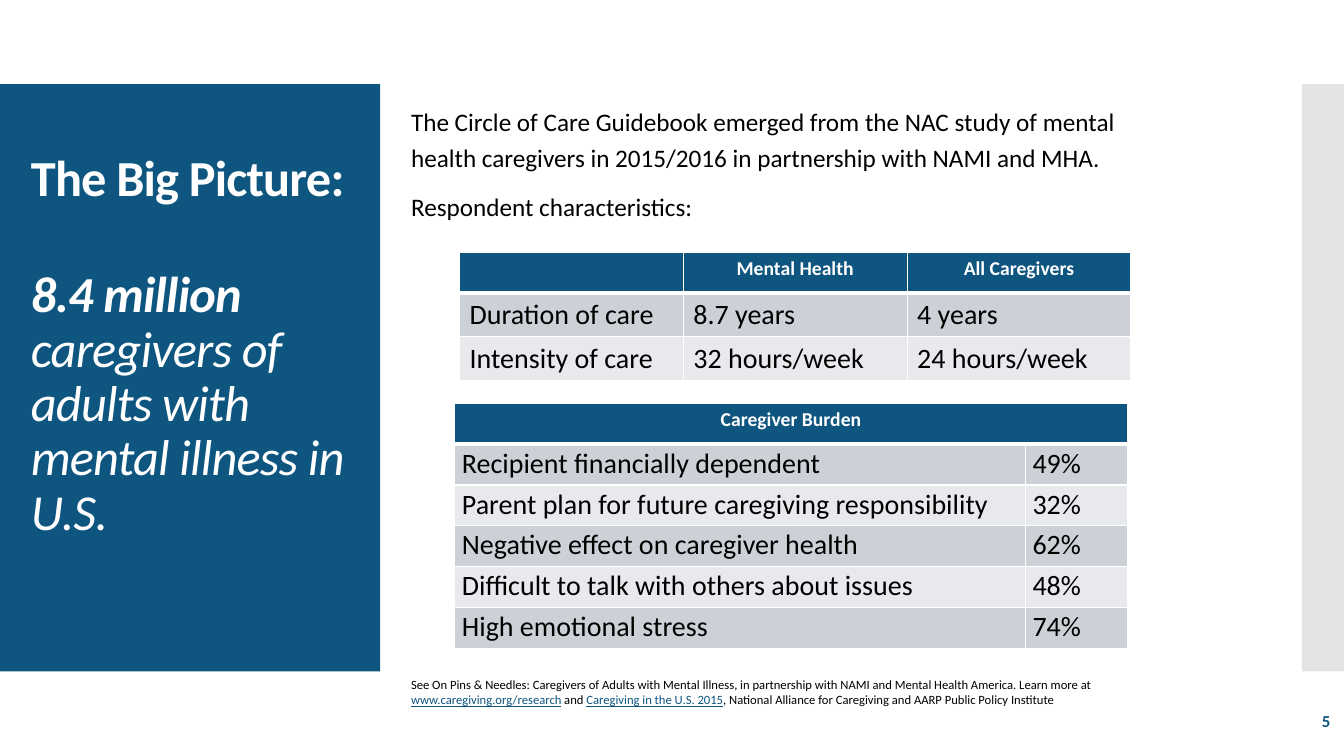
from lxml import etree
from pptx import Presentation
from pptx.dml.color import RGBColor
from pptx.enum.shapes import MSO_SHAPE
from pptx.enum.text import MSO_ANCHOR, PP_ALIGN
from pptx.oxml.ns import qn
from pptx.util import Cm, Pt

RECTANGLE = MSO_SHAPE.RECTANGLE
TOP, MIDDLE = MSO_ANCHOR.TOP, MSO_ANCHOR.MIDDLE
LEFT, CENTER, RIGHT = PP_ALIGN.LEFT, PP_ALIGN.CENTER, PP_ALIGN.RIGHT

# Each text is a list of paragraphs; each paragraph is a list of (words, style).
TITLE = [
    [("The Big Picture:", "title")],
    [("8.4 million", "title_strong"),
     (" caregivers of adults with mental illness in U.S.", "title_light")],
]
INTRO = [
    [("The Circle of Care Guidebook emerged from the NAC study of mental health "
      "caregivers in 2015/2016 in partnership with NAMI and MHA.", "intro")],
    [("Respondent characteristics:", "intro")],
]
SOURCES = [[
    ("See On Pins & Needles: Caregivers of Adults with Mental Illness, in partnership "
     "with NAMI and Mental Health America. Learn more at ", "source"),
    ("www.caregiving.org/research", "source_link"),
    (" and ", "source"),
    ("Caregiving in the U.S. 2015", "source_link"),
    (", National Alliance for Caregiving and AARP Public Policy Institute", "source"),
]]
PAGE_NUMBER = [[("5", "page_number")]]
CARE = [
    ("", "Mental Health", "All Caregivers"),
    ("Duration of care", "8.7 years", "4 years"),
    ("Intensity of care", "32 hours/week", "24 hours/week"),
]
BURDEN = [
    ("Caregiver Burden", ""),
    ("Recipient financially dependent", "49%"),
    ("Parent plan for future caregiving responsibility", "32%"),
    ("Negative effect on caregiver health", "62%"),
    ("Difficult to talk with others about issues", "48%"),
    ("High emotional stress", "74%"),
]

THEME = {
    "font": "Calibri",
    "blue": RGBColor(0x0E, 0x55, 0x80),
    "grey": RGBColor(0xC8, 0xC8, 0xC8),
    "white": RGBColor(0xFF, 0xFF, 0xFF),
    "black": RGBColor(0, 0, 0),
    "bands": (RGBColor(0xCC, 0xD1, 0xD8), RGBColor(0xE7, 0xE9, 0xED)),
    "styles": {
        "title": {"size": Pt(36), "color": "white", "bold": True},
        "title_strong": {"size": Pt(36), "color": "white", "bold": True, "italic": True},
        "title_light": {"size": Pt(36), "color": "white", "italic": True},
        "intro": {"size": Pt(18), "color": "black"},
        "source": {"size": Pt(9), "color": "black"},
        "source_link": {"size": Pt(9), "color": "blue", "underline": True},
        "page_number": {"size": Pt(12), "color": "blue", "bold": True},
        "header": {"size": Pt(14), "color": "white", "bold": True},
        "cell": {"size": Pt(20), "color": "black", "bold": False},
    },
}
TITLE_TRACKING = "-60"
ROW_HEIGHT = Cm(1.03)


def set_values(target, values):
    for name, value in values.items():
        setattr(target, name, value)


def write(frame, paragraphs, layout):
    """Fill a text frame; layout holds paragraph format values."""
    for index, spans in enumerate(paragraphs):
        para = frame.paragraphs[0] if index == 0 else frame.add_paragraph()
        set_values(para, layout)
        for words, style in spans:
            span = para.add_run()
            span.text = words
            span.font.name = THEME["font"]
            values = dict(THEME["styles"][style])
            span.font.color.rgb = THEME[values.pop("color")]
            set_values(span.font, values)


def add_text(page, place, paragraphs, anchor=TOP, **layout):
    frame = page.shapes.add_textbox(*map(Cm, place)).text_frame
    set_values(frame, {"word_wrap": True, "vertical_anchor": anchor})
    write(frame, paragraphs, layout)
    return frame


def add_panel(page, place, color):
    panel = page.shapes.add_shape(RECTANGLE, *map(Cm, place))
    panel.shadow.inherit = False
    panel.fill.solid()
    panel.fill.fore_color.rgb = THEME[color]
    panel.line.fill.background()
    return panel


def set_borders(cell, is_header):
    properties = cell._tc.get_or_add_tcPr()
    for side in ("lnL", "lnR", "lnT", "lnB"):
        width = Pt(3) if is_header and side == "lnB" else Pt(1)
        line = etree.SubElement(properties, qn("a:" + side), w=str(width))
        fill = etree.SubElement(line, qn("a:solidFill"))
        etree.SubElement(fill, qn("a:srgbClr"), val=str(THEME["white"]))


def add_banded_table(page, left, top, widths, rows, cell_format, layout):
    table = page.shapes.add_table(
        len(rows), len(widths), Cm(left), Cm(top), Cm(sum(widths)), ROW_HEIGHT * len(rows)
    ).table
    for column, width in zip(table.columns, widths):
        column.width = Cm(width)
    for row_index, row in enumerate(rows):
        table.rows[row_index].height = ROW_HEIGHT
        is_header = row_index == 0
        for column_index, words in enumerate(row):
            cell = table.cell(row_index, column_index)
            set_borders(cell, is_header)
            cell.fill.solid()
            band = THEME["bands"][(row_index - 1) % 2]
            cell.fill.fore_color.rgb = THEME["blue"] if is_header else band
            if not is_header:
                set_values(cell, cell_format)
            if words:
                style = "header" if is_header else "cell"
                write(cell.text_frame, [[(words, style)]],
                      {"alignment": CENTER} if is_header else layout)
    return table


def main():
    deck = Presentation()
    deck.slide_width, deck.slide_height = Cm(33.87), Cm(19.05)
    page = deck.slides.add_slide(deck.slide_layouts[6])

    add_panel(page, (0, 2.12, 9.58, 14.8), "blue")
    strip = add_panel(page, (32.81, 2.12, 1.06, 14.8), "grey")
    strip_color = strip.fill._xPr.find(".//" + qn("a:srgbClr"))
    etree.SubElement(strip_color, qn("a:alpha"), val="50000")

    title = add_text(page, (0.53, 3.12, 8.86, 12.78), TITLE, MIDDLE, line_spacing=0.9)
    title.margin_bottom = Cm(1.65)
    title.paragraphs[1].space_before = Pt(44)
    for para in title.paragraphs:
        for span in para.runs:
            span.font._element.set("spc", TITLE_TRACKING)

    add_text(page, (29.54, 17.65, 4.24, 1.02), PAGE_NUMBER, MIDDLE, alignment=RIGHT)
    add_text(page, (10.11, 16.94, 20.37, 1.02), SOURCES)
    add_text(page, (10.11, 2.39, 19.89, 3.35), INTRO, line_spacing=1.2, space_after=Pt(9))

    add_banded_table(page, 11.58, 6.35, [5.64] * 3, CARE, {}, {"alignment": LEFT})
    burden = add_banded_table(
        page, 11.46, 10.16, [14.38, 2.57], BURDEN,
        {"margin_left": Cm(0.18), "margin_right": Cm(0.18),
         "margin_top": 0, "margin_bottom": 0},
        {"line_spacing": 1.07, "space_after": Pt(2)},
    )
    burden.cell(0, 0).merge(burden.cell(0, 1))

    deck.save("out.pptx")


if __name__ == "__main__":
    main()
